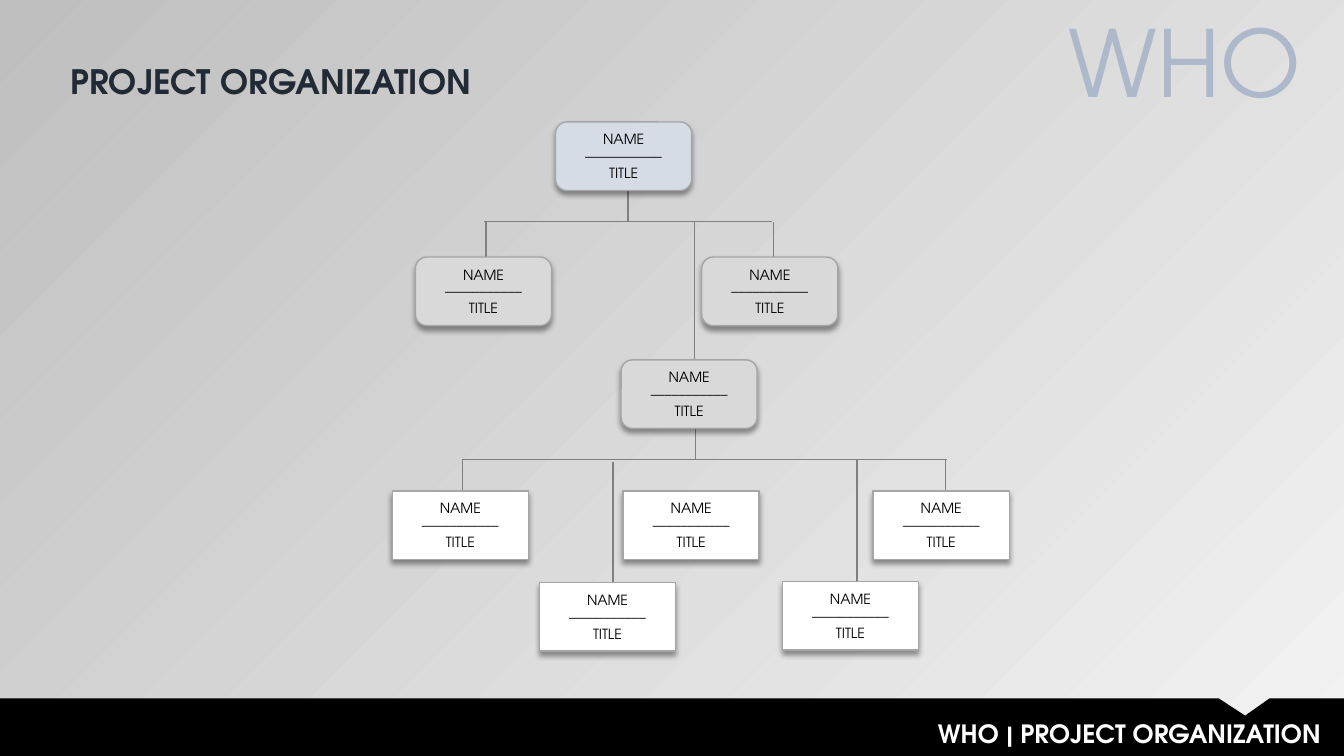
"""Build the project organization chart slide."""
from lxml.etree import SubElement
from pptx import Presentation
from pptx.dml.color import RGBColor
from pptx.enum.shapes import MSO_CONNECTOR as CONN, MSO_SHAPE as SHAPE
from pptx.enum.text import MSO_ANCHOR as ANCHOR, MSO_AUTO_SIZE as AUTO, PP_ALIGN as ALIGN
from pptx.oxml.ns import qn
from pptx.util import Inches, Pt

FONT = "TeX Gyre Adventor"
rgb = RGBColor.from_string


def write(sp, text, size, color, align, bold=False):
    tf = sp.text_frame
    tf.word_wrap = True
    tf.text = text
    for p in tf.paragraphs:
        p.alignment = align
        p.font.name = FONT
        p.font.size = Pt(size)
        p.font.bold = bold
        p.font.color.rgb = rgb(color)
    return tf


prs = Presentation()
prs.slide_width, prs.slide_height = Inches(13.33), Inches(7.5)
s = prs.slides.add_slide(prs.slide_layouts[5])

bg = s.background.fill
bg.gradient()
bg.gradient_angle = 135
for stop, color in zip(bg.gradient_stops, ("F2F2F2", "BFBFBF")):
    stop.color.rgb = rgb(color)

outline = [(12.09, 6.93), (12.35, 7.1), (12.59, 6.93), (13.33, 6.93), (13.33, 7.5), (0, 7.5)]
fb = s.shapes.build_freeform(0, Inches(6.93))
fb.add_line_segments([(Inches(x), Inches(y)) for x, y in outline], close=True)
footer = fb.convert_to_shape()
footer.shadow.inherit = False
footer.fill.solid()
footer.fill.fore_color.rgb = rgb("000000")
footer.line.fill.background()

labels = [
    ("WHO | PROJECT ORGANIZATION", (4.14, 7.08, 9.06, 0.4), 18, "FFFFFF", True),
    ("WHO", (7.39, 0, 5.61, 1.21), 66, "ADB9CA", False),
]
for text, box, size, color, bold in labels:
    sp = s.shapes.add_textbox(*map(Inches, box))
    write(sp, text, size, color, ALIGN.RIGHT, bold).auto_size = AUTO.SHAPE_TO_FIT_TEXT

title = s.shapes.title
title.left, title.top, title.width, title.height = map(Inches, (0.6, 0.55, 8.9, 0.5))
tf = write(title, "PROJECT ORGANIZATION", 24, "222A35", ALIGN.LEFT, True)
tf.vertical_anchor = ANCHOR.TOP
tf.auto_size = AUTO.SHAPE_TO_FIT_TEXT

links = [
    (6.9, 4.14, 6.9, 4.56), (4.58, 4.56, 9.39, 4.56), (4.59, 4.56, 4.59, 4.98),
    (6.08, 4.58, 6.08, 5.84), (8.5, 4.56, 8.5, 5.82), (9.38, 4.55, 9.38, 4.97),
    (7.67, 2.2, 7.67, 2.62), (6.23, 1.77, 6.23, 2.19), (4.8, 2.2, 7.66, 2.2),
    (4.82, 2.2, 4.82, 2.62), (6.89, 2.2, 6.89, 3.68),
]
for ends in links:
    link = s.shapes.add_connector(CONN.STRAIGHT, *map(Inches, ends))
    link.line.color.rgb = rgb("808080")
    link.line.width = Pt(1)
    SubElement(link._element.spPr, qn("a:effectLst"))

levels = [
    (SHAPE.FLOWCHART_ALTERNATE_PROCESS, "D6DCE5", [(5.51, 1.21)]),
    (SHAPE.FLOWCHART_ALTERNATE_PROCESS, "D9D9D9", [(4.12, 2.55), (6.96, 2.55), (6.16, 3.57)]),
    (SHAPE.RECTANGLE, "FFFFFF",
     [(3.89, 4.87), (6.18, 4.87), (8.66, 4.87), (5.35, 5.78), (7.76, 5.77)]),
]
for kind, color, spots in levels:
    for x, y in spots:
        sp = s.shapes.add_shape(kind, Inches(x), Inches(y), Inches(1.35), Inches(0.68))
        sp.fill.solid()
        sp.fill.fore_color.rgb = rgb(color)
        sp.line.color.rgb = rgb("A6A6A6")
        sp.line.width = Pt(1)
        sp.shadow.inherit = False
        effects = sp._element.spPr.find(qn("a:effectLst"))
        shadow = SubElement(effects, qn("a:outerShdw"), blurRad=str(Pt(4)), dist=str(Pt(3)),
                            dir="5400000", algn="t", rotWithShape="0")
        black = SubElement(shadow, qn("a:srgbClr"), val="000000")
        SubElement(black, qn("a:alpha"), val="40000")
        tf = write(sp, "NAME\n–––––––––––\nTITLE", 10, "000000", ALIGN.CENTER)
        tf.vertical_anchor = ANCHOR.MIDDLE
        tf.margin_left = tf.margin_right = tf.margin_top = tf.margin_bottom = Inches(0.02)

prs.save("out.pptx")
